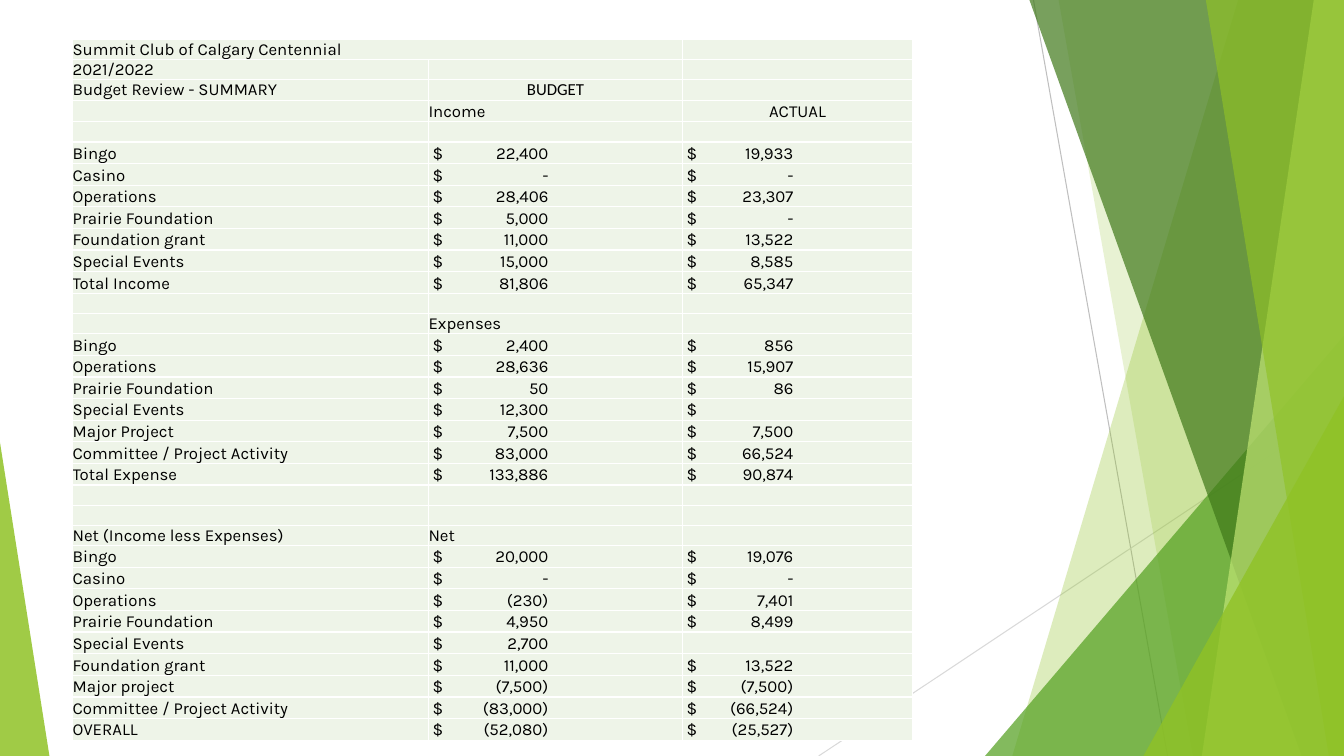
import lxml.etree
import pptx
import pptx.dml.color
import pptx.enum.shapes
import pptx.enum.text
import pptx.oxml.ns
import pptx.util

Inches = pptx.util.Inches
qn = pptx.oxml.ns.qn


def rgb(value):
    return pptx.dml.color.RGBColor.from_string(value)


def paint(sp, color, opacity):
    sp.shadow.inherit = False
    sp.line.fill.background()
    sp.fill.solid()
    sp.fill.fore_color.rgb = rgb(color)
    clr = sp.fill._xPr.find(".//" + qn("a:srgbClr"))
    lxml.etree.SubElement(clr, qn("a:alpha"), val=str(opacity * 1000))


prs = pptx.Presentation()
prs.slide_width = Inches(13.33)
prs.slide_height = Inches(7.5)
s = prs.slides.add_slide(prs.slide_layouts[6])

for x1, y1, x2, y2, color in [
    (10.25, 0, 11.58, 7.5, "BFBFBF"),
    (13.33, 4.03, 8.12, 7.5, "D9D9D9"),
]:
    line = s.shapes.add_connector(
        pptx.enum.shapes.MSO_CONNECTOR.STRAIGHT,
        Inches(x1), Inches(y1), Inches(x2), Inches(y2))
    line.line.color.rgb = rgb(color)
    line.line.width = pptx.util.Pt(0.75)
    lxml.etree.SubElement(line._element.spPr, qn("a:effectLst"))

decor = [
    ("band", 12.28, 10.04, "90C226", 30),
    ("band", 10.5, 11.83, "90C226", 20),
    ("triangle", (9.77, 3.33, 3.56, 4.17), 1, "54A021", 72),
    ("band", 10.21, 12.91, "3F7819", 70),
    ("band", 13.03, 11.92, "C0E474", 70),
    ("band", 11.96, 13.18, "90C226", 65),
    ("triangle", (11.34, 3.93, 1.99, 3.57), 1, "90C226", 80),
    ("triangle", (0, 4.39, 0.49, 3.11), 0, "90C226", 85),
]
for kind, a, b, color, opacity in decor:
    if kind == "band":
        fb = s.shapes.build_freeform(Inches(a), 0)
        fb.add_line_segments([
            (prs.slide_width, 0),
            (prs.slide_width, prs.slide_height),
            (Inches(b), prs.slide_height)])
        sp = fb.convert_to_shape()
    else:
        sp = s.shapes.add_shape(
            pptx.enum.shapes.MSO_SHAPE.ISOSCELES_TRIANGLE,
            *[Inches(v) for v in a])
        sp.adjustments[0] = b
    paint(sp, color, opacity)

rows = [
    ("Summit Club of Calgary Centennial", "", ""),
    ("2021/2022", "", ""),
    ("Budget Review - SUMMARY", "BUDGET", ""),
    ("", "Income", "ACTUAL"),
    ("", "", ""),
    ("Bingo", "$\t22,400", "$\t19,933"),
    ("Casino", "$\t-", "$\t-"),
    ("Operations", "$\t28,406", "$\t23,307"),
    ("Prairie Foundation", "$\t5,000", "$\t-"),
    ("Foundation grant", "$\t11,000", "$\t13,522"),
    ("Special Events", "$\t15,000", "$\t8,585"),
    ("Total Income", "$\t81,806", "$\t65,347"),
    ("", "", ""),
    ("", "Expenses", ""),
    ("Bingo", "$\t2,400", "$\t856"),
    ("Operations", "$\t28,636", "$\t15,907"),
    ("Prairie Foundation", "$\t50", "$\t86"),
    ("Special Events", "$\t12,300", "$"),
    ("Major Project", "$\t7,500", "$\t7,500"),
    ("Committee / Project Activity", "$\t83,000", "$\t66,524"),
    ("Total Expense", "$\t133,886", "$\t90,874"),
    ("", "", ""),
    ("", "", ""),
    ("Net (Income less Expenses)", "Net", ""),
    ("Bingo", "$\t20,000", "$\t19,076"),
    ("Casino", "$\t-", "$\t-"),
    ("Operations", "$\t(230)", "$\t7,401"),
    ("Prairie Foundation", "$\t4,950", "$\t8,499"),
    ("Special Events", "$\t2,700", ""),
    ("Foundation grant", "$\t11,000", "$\t13,522"),
    ("Major project", "$\t(7,500)", "$\t(7,500)"),
    ("Committee / Project Activity", "$\t(83,000)", "$\t(66,524)"),
    ("OVERALL", "$\t(52,080)", "$\t(25,527)"),
]
widths = [3.53, 2.52, 2.28]
tabs = [0, 1.15, 1.06]
short = 0.2
tall_rows = [bool(row[2]) or row[1].startswith("$") for row in rows]
tall = (6.95 - short * tall_rows.count(False)) / tall_rows.count(True)

table = s.shapes.add_table(
    len(rows), 3, Inches(0.72), Inches(0.39), Inches(8.33), Inches(6.95)).table
table.first_row = False
table.horz_banding = False
for col, width in zip(table.columns, widths):
    col.width = Inches(width)

for i, row in enumerate(rows):
    table.rows[i].height = Inches(tall if tall_rows[i] else short)
    for j, text in enumerate(row):
        cell = table.cell(i, j)
        cell.fill.solid()
        cell.fill.fore_color.rgb = rgb("EEF4E8")
        cell.vertical_anchor = pptx.enum.text.MSO_ANCHOR.BOTTOM
        cell.margin_top = cell.margin_right = cell.margin_bottom = 0
        cell.margin_left = Inches(0.04 if text.startswith("$") else 0)
        p = cell.text_frame.paragraphs[0]
        p.text = text
        p.font.size = pptx.util.Pt(12)
        p.font.name = "Calibri" if text == "BUDGET" else "Karla"
        p.font.color.rgb = rgb("000000")
        if text in ("BUDGET", "ACTUAL"):
            p.alignment = pptx.enum.text.PP_ALIGN.CENTER
        if "\t" in text:
            tab_list = lxml.etree.Element(qn("a:tabLst"))
            lxml.etree.SubElement(
                tab_list, qn("a:tab"), pos=str(Inches(tabs[j])), algn="r")
            p._p.pPr.insert(0, tab_list)
table.cell(0, 0).merge(table.cell(0, 1))

prs.save("out.pptx")
